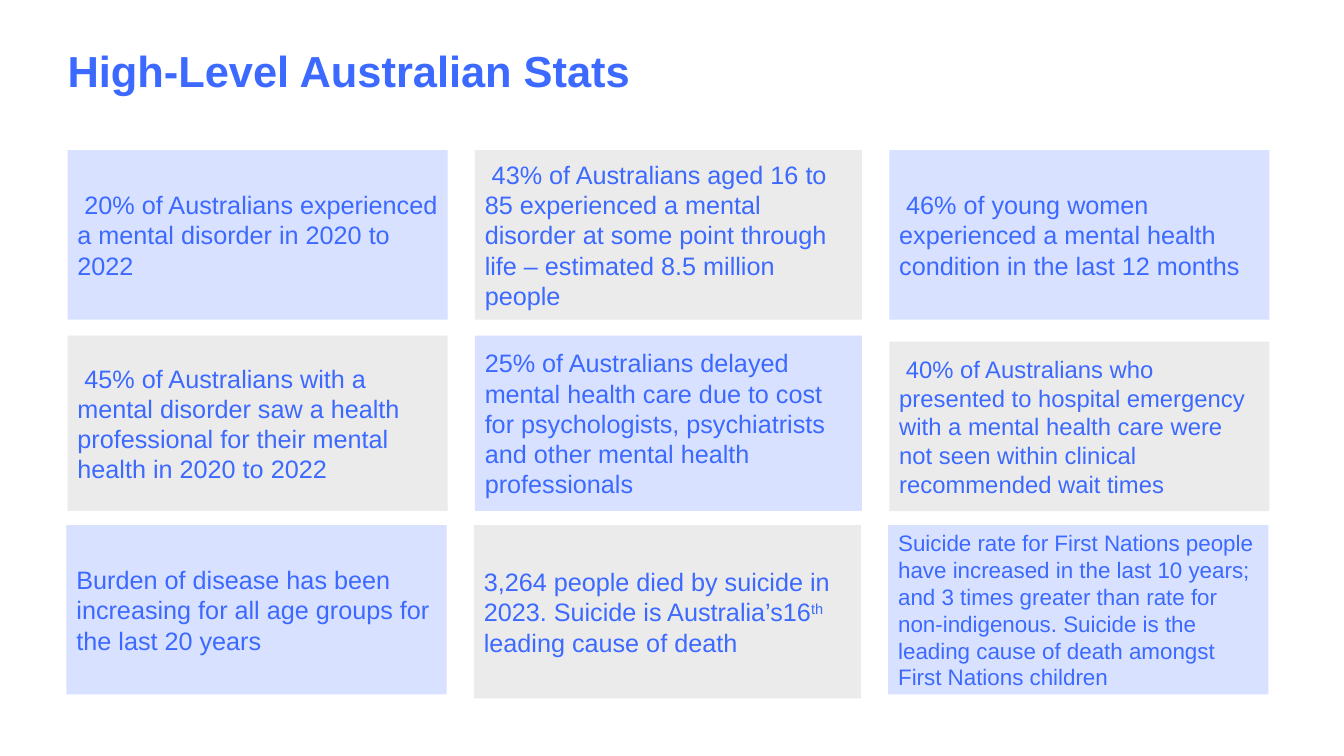
import pptx
import pptx.util
import pptx.dml.color
import pptx.enum.shapes
import pptx.enum.text

PX = 9144  # EMU per px, 100 px to the inch
BLUE, PALE, GREY = "3C69FF", "D8E1FF", "EBEBEB"


def rgb(value):
    return pptx.dml.color.RGBColor.from_string(value)


def add_run(p, text, size, bold=False):
    r = p.add_run()
    r.text = text
    r.font.name = "Arial"
    r.font.size = pptx.util.Pt(size)
    r.font.bold = bold
    r.font.color.rgb = rgb(BLUE)
    return r


prs = pptx.Presentation()
prs.slide_width, prs.slide_height = 1333 * PX, 750 * PX
s = prs.slides.add_slide(prs.slide_layouts[5])

title = s.shapes.title
title.left, title.top, title.width, title.height = (v * PX for v in (67, 50, 1111, 79))
tf = title.text_frame
tf.margin_left = tf.margin_top = tf.margin_right = tf.margin_bottom = 0
tf.vertical_anchor = pptx.enum.text.MSO_ANCHOR.TOP
tf.word_wrap = True
p = tf.paragraphs[0]
p.alignment = pptx.enum.text.PP_ALIGN.LEFT
p.line_spacing = 0.9
add_run(p, "High-Level Australian Stats", 31, bold=True)

# left, top, width, height, text size, runs (the second run is superscript)
stats = [
    (67, 149, 377, 168, 18, [" 20% of Australians experienced a mental disorder in 2020 to 2022"]),
    (471, 149, 384, 168, 18, [" 43% of Australians aged 16 to 85 experienced a mental disorder "
                              "at some point through life – estimated 8.5 million people"]),
    (882, 149, 377, 168, 18, [" 46% of young women experienced a mental health condition "
                              "in the last 12 months"]),
    (67, 333, 377, 174, 18, [" 45% of Australians with a mental disorder saw a health "
                             "professional for their mental health in 2020 to 2022"]),
    (471, 333, 384, 174, 18, ["25% of Australians delayed mental health care due to cost for "
                              "psychologists, psychiatrists and other mental health professionals"]),
    (882, 339, 377, 168, 17, [" 40% of Australians who presented to hospital emergency with a mental "
                              "health care were not seen within clinical recommended wait times"]),
    (66, 521, 377, 168, 18, ["Burden of disease has been increasing for all age groups "
                             "for the last 20 years"]),
    (470, 521, 384, 172, 18, ["3,264 people died by suicide in 2023. Suicide is Australia’s16",
                              "th", " leading cause of death"]),
    (881, 521, 377, 168, 16, ["Suicide rate for First Nations people have increased in the last "
                              "10 years; and 3 times greater than rate for non-indigenous. Suicide is "
                              "the leading cause of death amongst First Nations children"]),
]
for i, (left, top, width, height, size, texts) in enumerate(stats):
    sp = s.shapes.add_shape(pptx.enum.shapes.MSO_SHAPE.RECTANGLE,
                            left * PX, top * PX, width * PX, height * PX)
    sp.shadow.inherit = False
    sp.fill.solid()
    sp.fill.fore_color.rgb = rgb(GREY if i % 2 else PALE)
    sp.line.fill.background()
    tf = sp.text_frame
    tf.word_wrap = True
    tf.vertical_anchor = pptx.enum.text.MSO_ANCHOR.MIDDLE
    p = tf.paragraphs[0]
    p.alignment = pptx.enum.text.PP_ALIGN.LEFT
    for j, text in enumerate(texts):
        r = add_run(p, text, size)
        if j == 1:
            r._r.get_or_add_rPr().set("baseline", "30000")

prs.save("out.pptx")
